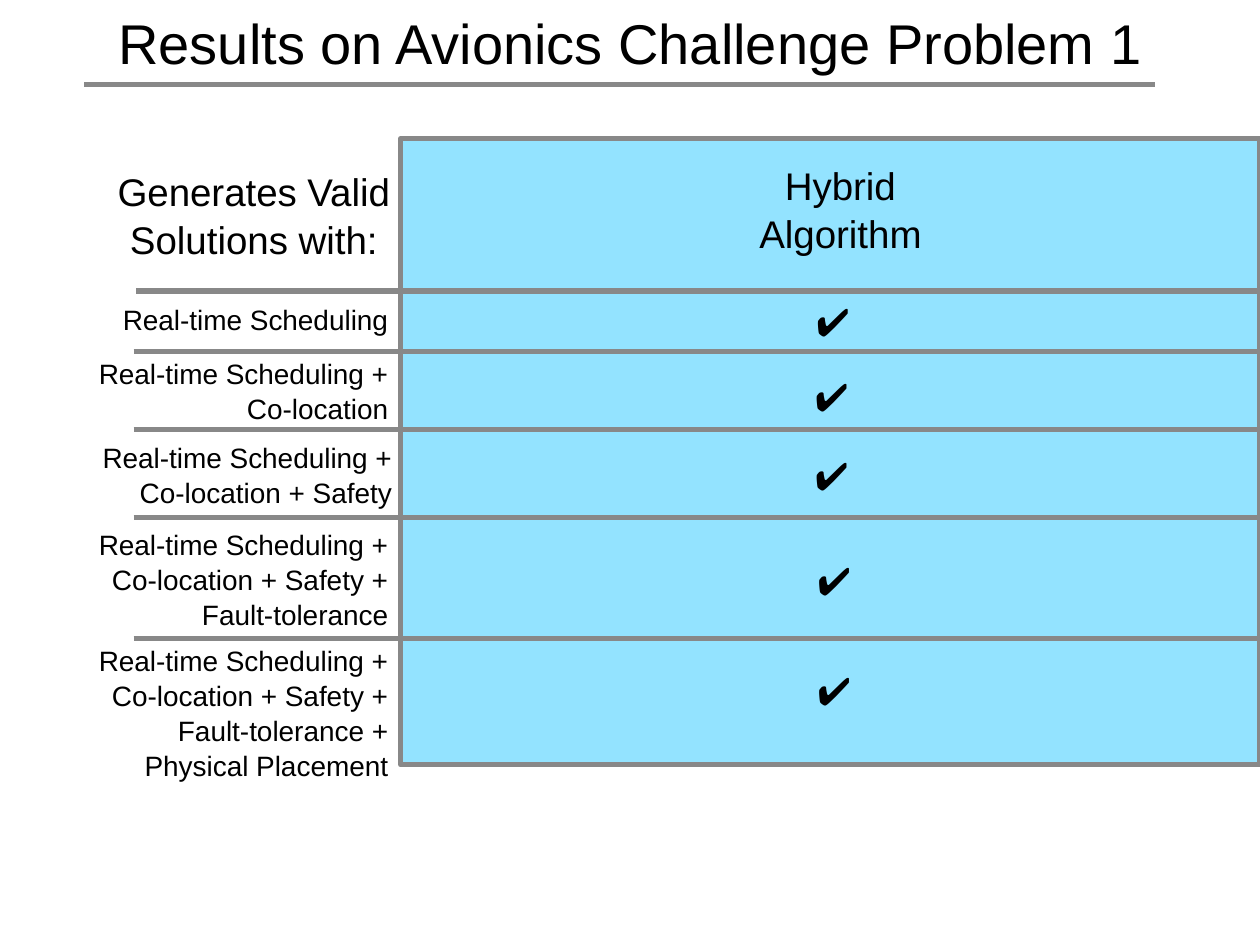
from pptx import Presentation, util as u
from pptx.dml.color import RGBColor
from pptx.enum import shapes, text
from lxml import etree

THEME = {
    "font": "Arial", "ink": RGBColor.from_string("000000"),
    "rule": RGBColor.from_string("888888"), "panel": RGBColor.from_string("93E3FF"),
    "title": 32, "head": 22, "label": 16, "line": 3, "leading": 1.04,
}
A = "http://schemas.openxmlformats.org/drawingml/2006/main"
LEFT, CENTER, RIGHT = text.PP_ALIGN.LEFT, text.PP_ALIGN.CENTER, text.PP_ALIGN.RIGHT

prs = Presentation()
prs.slide_width, prs.slide_height = u.Inches(10), u.Inches(7.5)
s = prs.slides.add_slide(prs.slide_layouts[6])


def add_text(x, y, w, h, words, size, align, anchor=text.MSO_ANCHOR.TOP):
    sp = s.shapes.add_textbox(*map(u.Inches, (x, y, w, h)))
    tf = sp.text_frame
    tf.word_wrap = True
    tf.vertical_anchor = anchor
    tf.text = words
    for p in tf.paragraphs:
        p.alignment = align
        p.line_spacing = THEME["leading"]
        for r in p.runs:
            r.font.name, r.font.size = THEME["font"], u.Pt(size)
            r.font.color.rgb = THEME["ink"]


def add_rule(x1, x2, y):
    sp = s.shapes.add_connector(shapes.MSO_CONNECTOR.STRAIGHT,
                                *map(u.Inches, (x1, y, x2, y)))
    sp.line.color.rgb, sp.line.width = THEME["rule"], u.Pt(THEME["line"])
    etree.SubElement(sp._element.spPr, f"{{{A}}}effectLst")


# Title and its rule
add_rule(0.67, 9.17, 0.67)
add_text(0.17, 0.11, 9.67, 0.42, "Results on Avionics Challenge Problem 1",
         THEME["title"], CENTER, text.MSO_ANCHOR.MIDDLE)

# Results panel, running to the slide's right edge
sp = s.shapes.add_shape(shapes.MSO_SHAPE.RECTANGLE,
                        *map(u.Inches, (3.18, 1.1, 6.82, 4.97)))
sp.shadow.inherit = False
sp.fill.solid()
sp.fill.fore_color.rgb = THEME["panel"]
sp.line.color.rgb, sp.line.width = THEME["rule"], u.Pt(THEME["line"])

# Column heads
add_text(0.36, 1.27, 3.31, 0.84, "Generates Valid Solutions with:", THEME["head"], CENTER)
add_text(4.71, 1.22, 3.92, 0.84, "Hybrid\nAlgorithm", THEME["head"], CENTER)

# Rows: each adds one more constraint to the row above
constraints = ["Real-time Scheduling", "Co-location", "Safety",
               "Fault-tolerance", "Physical Placement"]
rows = [  # rule y, rule x, label x, label y, label height, check x, check y
    (2.31, 1.08, 0.62, 2.34, 0.37, 6.25, 2.3),
    (2.79, 1.06, 0.62, 2.77, 0.64, 6.24, 2.9),
    (3.41, 1.06, 0.65, 3.44, 0.64, 6.24, 3.52),
    (4.11, 1.06, 0.62, 4.13, 0.91, 6.26, 4.36),
    (5.07, 1.06, 0.62, 5.05, 1.18, 6.26, 5.23),
]
for n, (rule_y, rule_x, label_x, label_y, label_h, check_x, check_y) in enumerate(rows, 1):
    add_rule(rule_x, 10, rule_y)
    add_text(label_x, label_y, 2.56, label_h, " + ".join(constraints[:n]),
             THEME["label"], RIGHT)
    add_text(check_x, check_y, 0.72, 0.47, "✔", THEME["head"], CENTER)

prs.save("out.pptx")
